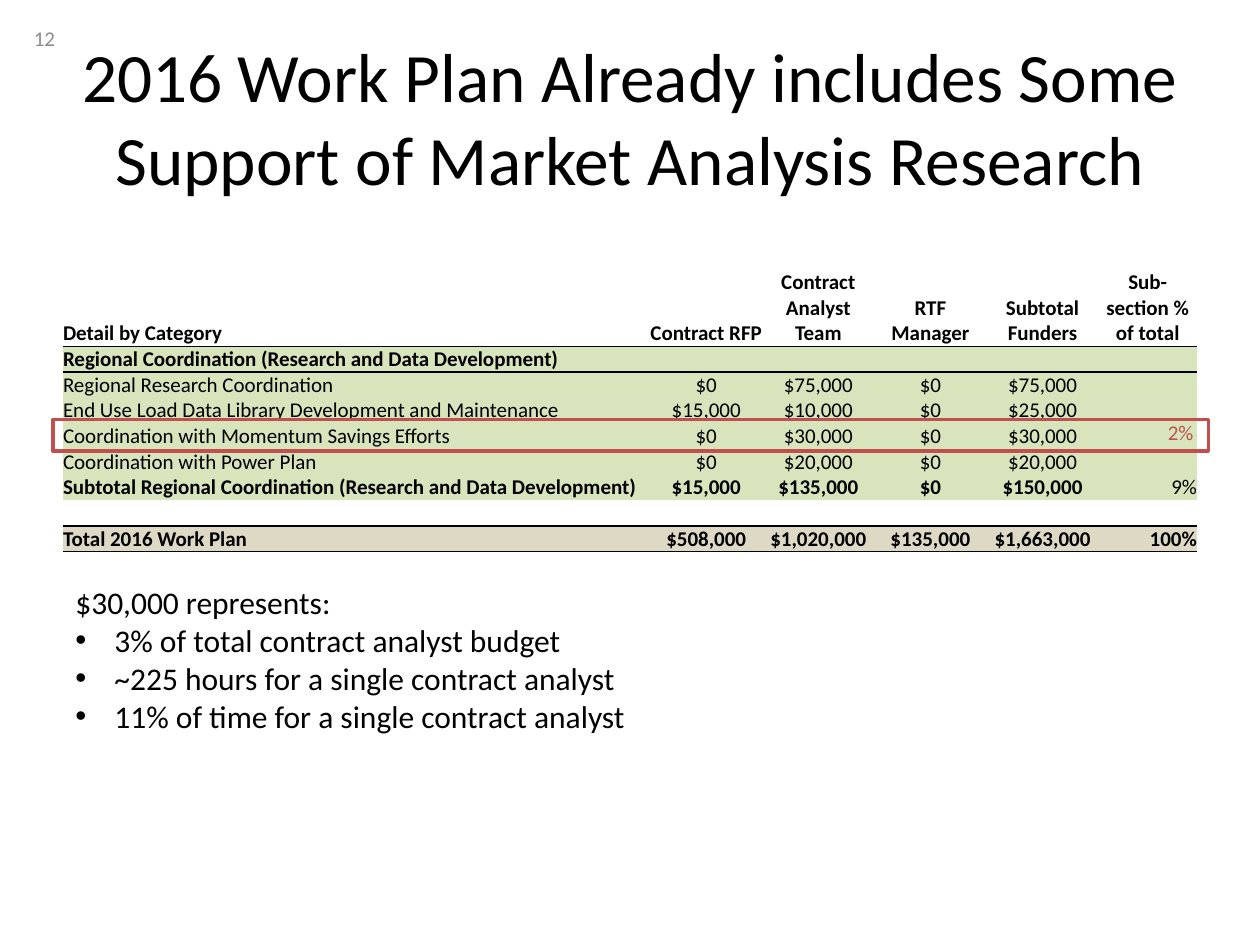
import pptx
import pptx.util
import pptx.dml.color
import pptx.enum.shapes
import pptx.enum.text
import pptx.oxml.ns
from lxml import etree

inch, pt = pptx.util.Inches, pptx.util.Pt
rgb = pptx.dml.color.RGBColor.from_string
tag = pptx.oxml.ns.qn
align = pptx.enum.text.PP_ALIGN
anchor = pptx.enum.text.MSO_ANCHOR

theme = {
    "font": "Calibri", "ink": "000000", "gray": "8C8C8C", "red": "C0504D",
    "green": "D8E4BC", "sand": "DDD9C4",
    "title": 39.6, "body": 18, "small": 12,
    "plain": "{2D5ABB26-0587-4C30-8999-92F81FD0307C}",
}
wide, high = 10, 7.5
edge = 0.05 * wide
title = "2016 Work Plan Already includes Some Support of Market Analysis Research"
page = "12"
share = "2%"
lead = "$30,000 represents:"
points = [
    "3% of total contract analyst budget",
    "~225 hours for a single contract analyst",
    "11% of time for a single contract analyst",
]
cols = [4.66, 0.89, 0.89, 0.89, 0.89, 0.78]
head, step = 0.61, 0.2
rows = [
    ("head", ["Detail by Category", "Contract RFP", "Contract Analyst Team",
              "RTF Manager", "Subtotal Funders", "Sub-section % of total"]),
    ("group", ["Regional Coordination (Research and Data Development)"]),
    ("item", ["Regional Research Coordination", "$0", "$75,000", "$0", "$75,000"]),
    ("item", ["End Use Load Data Library Development and Maintenance",
              "$15,000", "$10,000", "$0", "$25,000"]),
    ("item", ["Coordination with Momentum Savings Efforts",
              "$0", "$30,000", "$0", "$30,000"]),
    ("item", ["Coordination with Power Plan", "$0", "$20,000", "$0", "$20,000"]),
    ("sum", ["Subtotal Regional Coordination (Research and Data Development)",
             "$15,000", "$135,000", "$0", "$150,000", "9%"]),
    ("gap", []),
    ("total", ["Total 2016 Work Plan", "$508,000", "$1,020,000", "$135,000",
               "$1,663,000", "100%"]),
]
fills = {"group": "green", "item": "green", "sum": "green", "total": "sand"}
rules = {"head": ["lnB"], "group": ["lnT"], "gap": ["lnB"], "total": ["lnT", "lnB"]}


def style(para, size, ink="ink", bold=False):
    for run in para.runs:
        font = run.font
        font.name, font.size, font.bold = theme["font"], pt(theme[size]), bold
        font.color.rgb = rgb(theme[ink])


def place(shape, left, top, width, height):
    shape.left, shape.top = inch(left), inch(top)
    shape.width, shape.height = inch(width), inch(height)


def label(slide, box, lines, size, ink="ink", wrap=False):
    frame = slide.shapes.add_textbox(*map(inch, box)).text_frame
    frame.word_wrap = wrap
    frame.text = "\n".join(lines)
    for para in frame.paragraphs:
        style(para, size, ink)
    return frame


def rule(cell, side, spot):
    line = etree.Element(tag("a:" + side), w=str(pt(1)))
    fill = etree.SubElement(line, tag("a:solidFill"))
    etree.SubElement(fill, tag("a:srgbClr"), val=theme["ink"])
    cell._tc.get_or_add_tcPr().insert(spot, line)


def fill_cell(cell, kind, col, text):
    cell.margin_left = cell.margin_right = cell.margin_top = cell.margin_bottom = 0
    middle = kind in ("item", "sum") and 0 < col < 5
    cell.vertical_anchor = anchor.MIDDLE if middle else anchor.BOTTOM
    cell.text_frame.text = text
    para = cell.text_frame.paragraphs[0]
    if col:
        last = col == 5 and kind != "head"
        para.alignment = align.RIGHT if last else align.CENTER
    style(para, "small", bold=kind != "item" and (kind, col) != ("sum", 5))
    if not text:
        etree.SubElement(para._p, tag("a:endParaRPr"), sz=str(theme["small"] * 100))
    if kind in fills:
        cell.fill.solid()
        cell.fill.fore_color.rgb = rgb(theme[fills[kind]])
    else:
        cell.fill.background()
    for spot, side in enumerate(rules.get(kind, [])):
        rule(cell, side, spot)


def add_grid(slide):
    tall = head + step * (len(rows) - 1)
    grid = slide.shapes.add_table(len(rows), len(cols), inch(edge), inch(2.14),
                                  inch(sum(cols)), inch(tall)).table
    grid.first_row = grid.horz_banding = False
    grid._tbl.tblPr.find(tag("a:tableStyleId")).text = theme["plain"]
    for col, width in enumerate(cols):
        grid.columns[col].width = inch(width)
    for row, (kind, texts) in enumerate(rows):
        grid.rows[row].height = inch(step if row else head)
        padded = texts + [""] * (len(cols) - len(texts))
        for col, text in enumerate(padded):
            fill_cell(grid.cell(row, col), kind, col, text)


def main():
    deck = pptx.Presentation()
    deck.slide_width, deck.slide_height = inch(wide), inch(high)
    slide = deck.slides.add_slide(deck.slide_layouts[5])
    add_grid(slide)

    name = slide.shapes.title
    place(name, edge, 0.04 * high, wide - 2 * edge, high / 6)
    frame = name.text_frame
    frame.text = title
    frame.auto_size = pptx.enum.text.MSO_AUTO_SIZE.NONE
    frame.vertical_anchor = anchor.MIDDLE
    frame.paragraphs[0].alignment = align.CENTER
    style(frame.paragraphs[0], "title")

    num = label(slide, (0.17, 0.1, 2.33, 0.4), [page], "small", "gray", True)
    num.vertical_anchor = anchor.MIDDLE

    notes = label(slide, (edge, 4.58, 4.68, 1.31), [lead] + points, "body")
    for para in notes.paragraphs[1:]:
        prop = para._p.get_or_add_pPr()
        prop.set("marL", str(inch(0.31)))
        prop.set("indent", str(-inch(0.31)))
        etree.SubElement(prop, tag("a:buFont"), typeface="Arial")
        etree.SubElement(prop, tag("a:buChar"), char="•")

    box = slide.shapes.add_shape(pptx.enum.shapes.MSO_SHAPE.RECTANGLE,
                                 *map(inch, (0.42, 3.33, 9.17, 0.25)))
    box.shadow.inherit = False
    box.fill.background()
    box.line.color.rgb = rgb(theme["red"])
    box.line.width = pt(2)
    label(slide, (9.17, 3.28, 0.41, 0.3), [share], "small", "red")

    deck.save("out.pptx")


if __name__ == "__main__":
    main()
